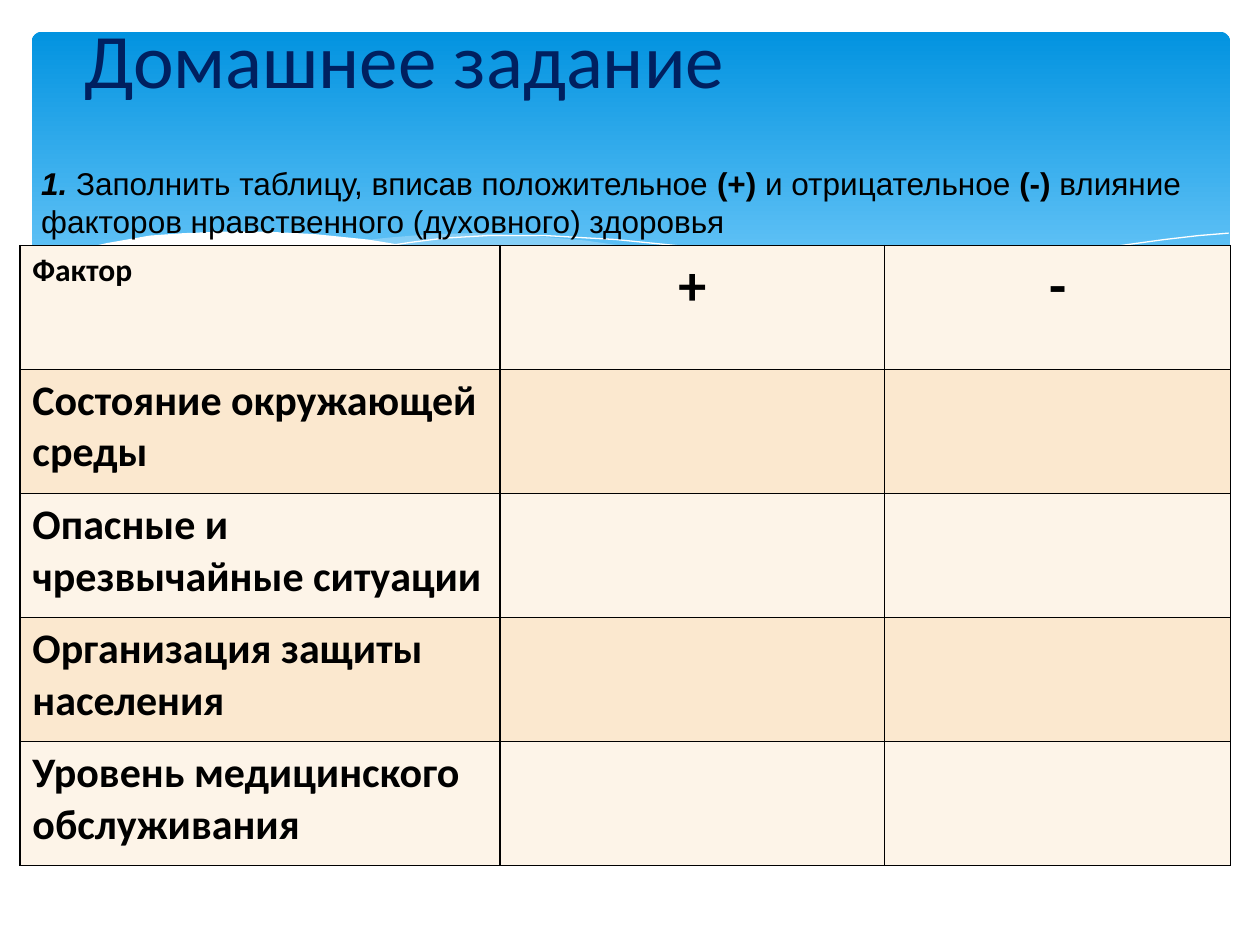
from dataclasses import dataclass
from typing import Optional

from lxml.etree import SubElement
from pptx import Presentation
from pptx.dml.color import RGBColor as Color
from pptx.enum.shapes import MSO_SHAPE as ShapeKind
from pptx.enum.text import MSO_ANCHOR as Anchor, PP_ALIGN as Align
from pptx.oxml import parse_xml
from pptx.oxml.ns import nsdecls, qn
from pptx.util import Cm, Pt


@dataclass(frozen=True)
class Theme:
    sky_top: str = "0293E0"
    sky_bottom: str = "83D3FE"
    mist: str = "C6E7FC"
    white: str = "FFFFFF"
    black: str = "000000"
    title: str = "002060"
    light_row: str = "FDF4E8"
    dark_row: str = "FBE8CF"
    heading_font: str = "Calibri"
    body_font: str = "Arial"
    title_size: int = 44
    sign_size: int = 32
    factor_size: int = 24
    body_size: int = 18


@dataclass(frozen=True)
class Wave:
    points: tuple
    fill: Optional[str] = None
    opacity: int = 100
    line: Optional[str] = None


@dataclass(frozen=True)
class Run:
    text: str
    size: int
    font: str
    color: str
    bold: bool = False
    italic: bool = False


THEME = Theme()

WAVES = (
    Wave(((24.77, 5.08), (23.75, 5.26), (21.87, 5.66), (19.79, 6.15), (16.79, 6.73),
          (18.26, 6.91), (20.4, 7.06), (22.38, 6.93), (23.57, 6.68), (24.79, 6.27)),
         fill=THEME.mist, opacity=29),
    Wave(((22.68, 6.93), (20.5, 6.6), (17.93, 6.1), (15.98, 5.64), (14.45, 5.28),
          (13.06, 5.03), (11.81, 4.85), (10.67, 4.75), (9.65, 4.7), (8.74, 4.72),
          (7.95, 4.78), (7.26, 4.85), (8.69, 5.05), (10.26, 5.36), (12.47, 5.89),
          (14.83, 6.4), (17.27, 6.81), (19.33, 7.04), (20.78, 7.06)),
         fill=THEME.mist, opacity=40),
    Wave(((7.85, 4.95), (8.33, 4.88), (8.97, 4.8), (9.83, 4.75), (11, 4.75),
          (12.42, 4.83), (14.12, 5), (16.15, 5.28), (18.47, 5.74), (21.11, 6.38),
          (23.04, 6.91)), line=THEME.white),
    Wave(((15.57, 6.53), (18.29, 5.82), (20.47, 5.33), (22.38, 4.98), (23.47, 4.83),
          (24.16, 4.75), (24.77, 4.7)), line=THEME.white),
    Wave(((24.82, 6.25), (23.62, 6.65), (22.23, 6.93), (20.55, 7.04), (18.44, 6.91),
          (15.9, 6.55), (13.44, 6.07), (11.35, 5.59), (9.27, 5.13), (7.42, 4.83),
          (6.35, 4.72), (5.36, 4.67), (4.5, 4.67), (3.71, 4.7), (3.02, 4.75),
          (2.16, 4.9), (1.5, 5.05), (0.91, 5.26), (0.58, 5.41), (0.58, 8.36),
          (24.82, 8.36)), fill=THEME.white),
)

FACTORS = (
    "Состояние окружающей среды",
    "Опасные и чрезвычайные ситуации",
    "Организация защиты населения",
    "Уровень медицинского обслуживания",
)
COLUMN_WIDTHS = (9.68, 7.75, 6.98)
ROW_HEIGHT = 2.5


def add_runs(paragraph, runs: tuple) -> None:
    for item in runs:
        run = paragraph.add_run()
        run.text = item.text
        run.font.size = Pt(item.size)
        run.font.name = item.font
        run.font.bold = item.bold
        run.font.italic = item.italic
        run.font.color.rgb = Color.from_string(item.color)


def add_text(slide, box: tuple, runs: tuple, align=Align.LEFT, anchor=Anchor.TOP) -> None:
    frame = slide.shapes.add_textbox(*map(Cm, box)).text_frame
    frame.word_wrap = True
    frame.vertical_anchor = anchor
    paragraph = frame.paragraphs[0]
    paragraph.alignment = align
    add_runs(paragraph, runs)


def add_sky(slide) -> None:
    sky = slide.shapes.add_shape(ShapeKind.ROUNDED_RECTANGLE, Cm(0.64), Cm(0.64), Cm(24.16), Cm(6.86))
    sky.adjustments[0] = 0.03
    sky.shadow.inherit = False
    sky.line.fill.background()
    sky.fill.gradient()
    sky.fill.gradient_angle = 270
    stops = ((0, THEME.sky_top), (0.9, THEME.sky_bottom))
    for stop, (position, color) in zip(sky.fill.gradient_stops, stops):
        stop.position = position
        stop.color.rgb = Color.from_string(color)


def add_wave(slide, wave: Wave) -> None:
    points = [(round(x * 100), round(y * 100)) for x, y in wave.points]
    builder = slide.shapes.build_freeform(*points[0], scale=Cm(0.01))
    builder.add_line_segments(points[1:], close=wave.fill is not None)
    shape = builder.convert_to_shape()
    shape.shadow.inherit = False
    if wave.fill:
        shape.fill.solid()
        shape.fill.fore_color.rgb = Color.from_string(wave.fill)
        if wave.opacity < 100:
            color = shape.fill._xPr.find(qn("a:solidFill"))[0]
            SubElement(color, qn("a:alpha"), val=str(wave.opacity * 1000))
    else:
        shape.fill.background()
    if wave.line:
        shape.line.color.rgb = Color.from_string(wave.line)
        shape.line.width = Pt(0)
    else:
        shape.line.fill.background()


def style_cell(cell, fill: str) -> None:
    cell.fill.solid()
    cell.fill.fore_color.rgb = Color.from_string(fill)
    properties = cell._tc.get_or_add_tcPr()
    for index, side in enumerate("LRTB"):
        properties.insert(index, parse_xml(
            f'<a:ln{side} {nsdecls("a")} w="{Pt(1)}"><a:solidFill>'
            f'<a:srgbClr val="{THEME.black}"/></a:solidFill></a:ln{side}>'))


def fill_cell(cell, text: str, size: int, align=Align.LEFT) -> None:
    paragraph = cell.text_frame.paragraphs[0]
    paragraph.alignment = align
    add_runs(paragraph, (Run(text, size, THEME.heading_font, THEME.black, bold=True),))


def add_factor_table(slide) -> None:
    row_count = len(FACTORS) + 1
    table = slide.shapes.add_table(
        row_count, len(COLUMN_WIDTHS), Cm(0.4), Cm(4.95),
        Cm(sum(COLUMN_WIDTHS)), Cm(ROW_HEIGHT * row_count)).table
    for column, width in zip(table.columns, COLUMN_WIDTHS):
        column.width = Cm(width)
    for index, row in enumerate(table.rows):
        row.height = Cm(ROW_HEIGHT)
        for cell in row.cells:
            style_cell(cell, THEME.dark_row if index % 2 else THEME.light_row)
    fill_cell(table.cell(0, 0), "Фактор", THEME.body_size)
    for column, sign in enumerate("+-", start=1):
        fill_cell(table.cell(0, column), sign, THEME.sign_size, Align.CENTER)
    for row, factor in enumerate(FACTORS, start=1):
        fill_cell(table.cell(row, 0), factor, THEME.factor_size)


def body_run(text: str, bold: bool = False, italic: bool = False) -> Run:
    return Run(text, THEME.body_size, THEME.body_font, THEME.black, bold, italic)


def main() -> None:
    presentation = Presentation()
    presentation.slide_width, presentation.slide_height = Cm(25.4), Cm(19.05)
    slide = presentation.slides.add_slide(presentation.slide_layouts[6])
    add_sky(slide)
    for wave in WAVES:
        add_wave(slide, wave)
    title = Run("Домашнее задание", THEME.title_size, THEME.heading_font, THEME.title)
    add_text(slide, (0.84, 0, 14.63, 2.34), (title,), Align.CENTER, Anchor.MIDDLE)
    add_factor_table(slide)
    add_text(slide, (0.58, 3.18, 24.21, 1.8), (
        body_run("1. ", bold=True, italic=True),
        body_run("Заполнить таблицу, вписав положительное "),
        body_run("(+)", bold=True),
        body_run(" и отрицательное "),
        body_run("(-)", bold=True),
        body_run(" влияние факторов нравственного (духовного) здоровья"),
    ))
    presentation.save("out.pptx")


if __name__ == "__main__":
    main()
